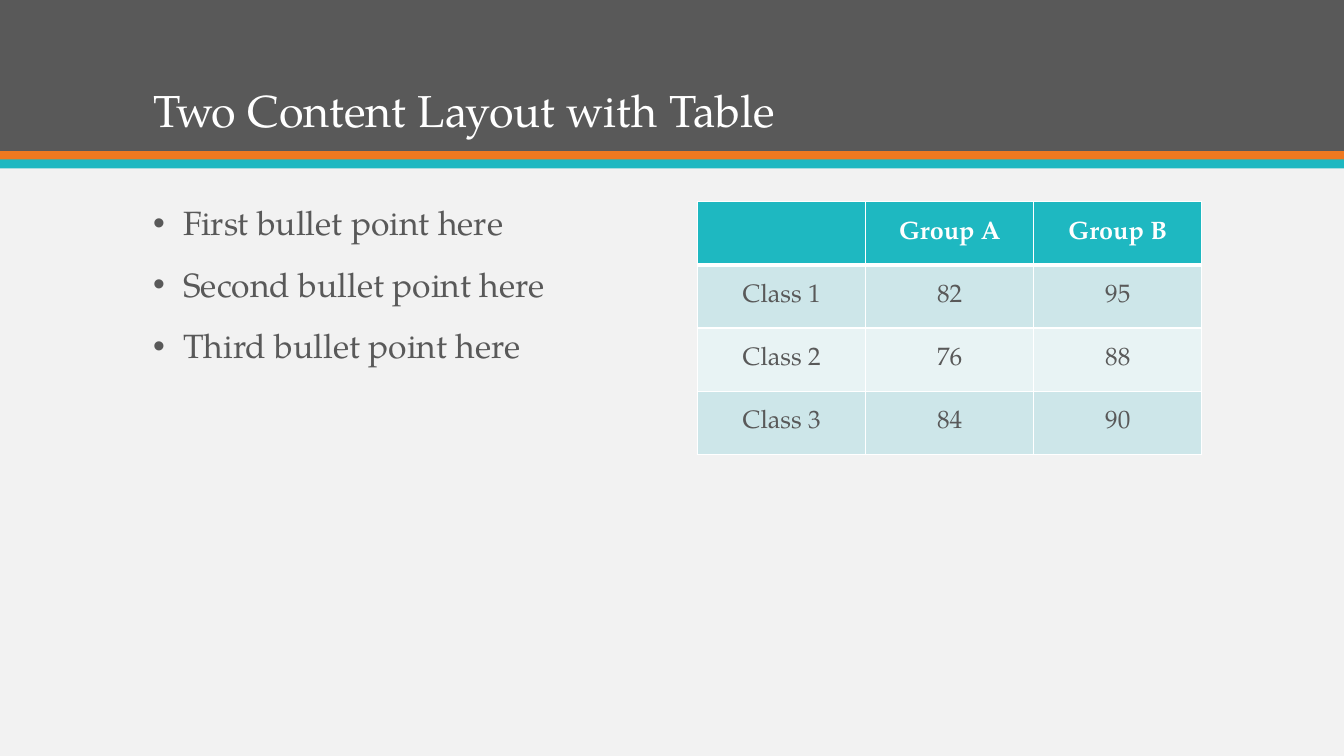
from lxml.etree import SubElement
from pptx import Presentation
from pptx.dml.color import RGBColor
from pptx.enum.shapes import MSO_SHAPE as Shape
from pptx.enum.text import MSO_ANCHOR as Anchor, MSO_AUTO_SIZE as AutoSize, PP_ALIGN as Align
from pptx.oxml.ns import qn
from pptx.util import Inches, Pt

FONT = "TeX Gyre Pagella"
GREY, ORANGE, TEAL, WHITE = "595959", "EF7920", "1EB8C1", "FFFFFF"
BACKGROUND = "F2F2F2"
ROW_FILLS = ["CDE6E9", "E8F3F4"]


def paint(fill, color):
    fill.solid()
    fill.fore_color.rgb = RGBColor.from_string(color)


class ContentSlide:
    def __init__(self, prs):
        self.slide = prs.slides.add_slide(prs.slide_layouts[5])
        self.shapes = self.slide.shapes
        paint(self.slide.background.fill, BACKGROUND)

    def add_run(self, paragraph, text, size, color, bold=False):
        run = paragraph.add_run()
        run.text = text
        font = run.font
        font.name, font.size, font.bold = FONT, Pt(size), bold
        font.color.rgb = RGBColor.from_string(color)

    def band(self, top, height, color):
        band = self.shapes.add_shape(
            Shape.RECTANGLE, 0, Inches(top), Inches(13.33), Inches(height))
        band.shadow.inherit = False
        paint(band.fill, color)
        band.line.fill.background()

    def title(self, text, left, top, width, height):
        title = self.shapes.title
        title.left, title.top = Inches(left), Inches(top)
        title.width, title.height = Inches(width), Inches(height)
        frame = title.text_frame
        frame.auto_size, frame.word_wrap = AutoSize.NONE, True
        frame.vertical_anchor = Anchor.BOTTOM
        paragraph = frame.paragraphs[0]
        paragraph.alignment, paragraph.line_spacing = Align.LEFT, 0.9
        self.add_run(paragraph, text, 32, WHITE)
        # Bring the title in front of the bands
        self.shapes.element.append(title.element)

    def bullets(self, points, left, top, width, height):
        box = self.shapes.add_textbox(
            Inches(left), Inches(top), Inches(width), Inches(height))
        frame = box.text_frame
        frame.word_wrap = True
        for i, point in enumerate(points):
            paragraph = frame.add_paragraph() if i else frame.paragraphs[0]
            paragraph.line_spacing, paragraph.space_before = 0.9, Pt(18)
            props = paragraph._p.get_or_add_pPr()
            props.set("marL", str(Inches(0.3)))
            props.set("indent", str(-Inches(0.3)))
            SubElement(props, qn("a:buFont"), typeface="Arial")
            SubElement(props, qn("a:buChar"), char="•")
            self.add_run(paragraph, point, 24, GREY)

    def border(self, cell, side, width):
        line = SubElement(cell._tc.get_or_add_tcPr(), qn(f"a:ln{side}"), w=str(Pt(width)))
        SubElement(SubElement(line, qn("a:solidFill")), qn("a:srgbClr"), val=WHITE)

    def table(self, rows, left, top, width, height):
        table = self.shapes.add_table(
            len(rows), len(rows[0]), Inches(left), Inches(top),
            Inches(width), Inches(height)).table
        for r, values in enumerate(rows):
            header = r == 0
            for c, value in enumerate(values):
                cell = table.cell(r, c)
                widths = {"L": 1, "R": 1, "T": 3 if r == 1 else 1, "B": 3 if header else 1}
                for side, line_width in widths.items():
                    self.border(cell, side, line_width)
                paint(cell.fill, TEAL if header else ROW_FILLS[(r - 1) % 2])
                cell.vertical_anchor = Anchor.MIDDLE
                paragraph = cell.text_frame.paragraphs[0]
                paragraph.alignment = Align.CENTER
                if value:
                    self.add_run(paragraph, value, 18, WHITE if header else GREY, header)


def main():
    prs = Presentation()
    prs.slide_width, prs.slide_height = Inches(13.33), Inches(7.5)
    page = ContentSlide(prs)

    page.band(0, 1.5, GREY)
    page.band(1.5, 0.09, ORANGE)
    page.band(1.58, 0.09, TEAL)
    page.title("Two Content Layout with Table", 1.42, 0.28, 10.5, 1.13)

    ordinals = ["First", "Second", "Third"]
    page.bullets([f"{ordinal} bullet point here" for ordinal in ordinals],
                 1.42, 2, 10.5, 4.75)

    scores = [
        ["", "Group A", "Group B"],
        ["Class 1", "82", "95"],
        ["Class 2", "76", "88"],
        ["Class 3", "84", "90"],
    ]
    page.table(scores, 6.92, 2, 5, 2.51)
    prs.save("out.pptx")


if __name__ == "__main__":
    main()
